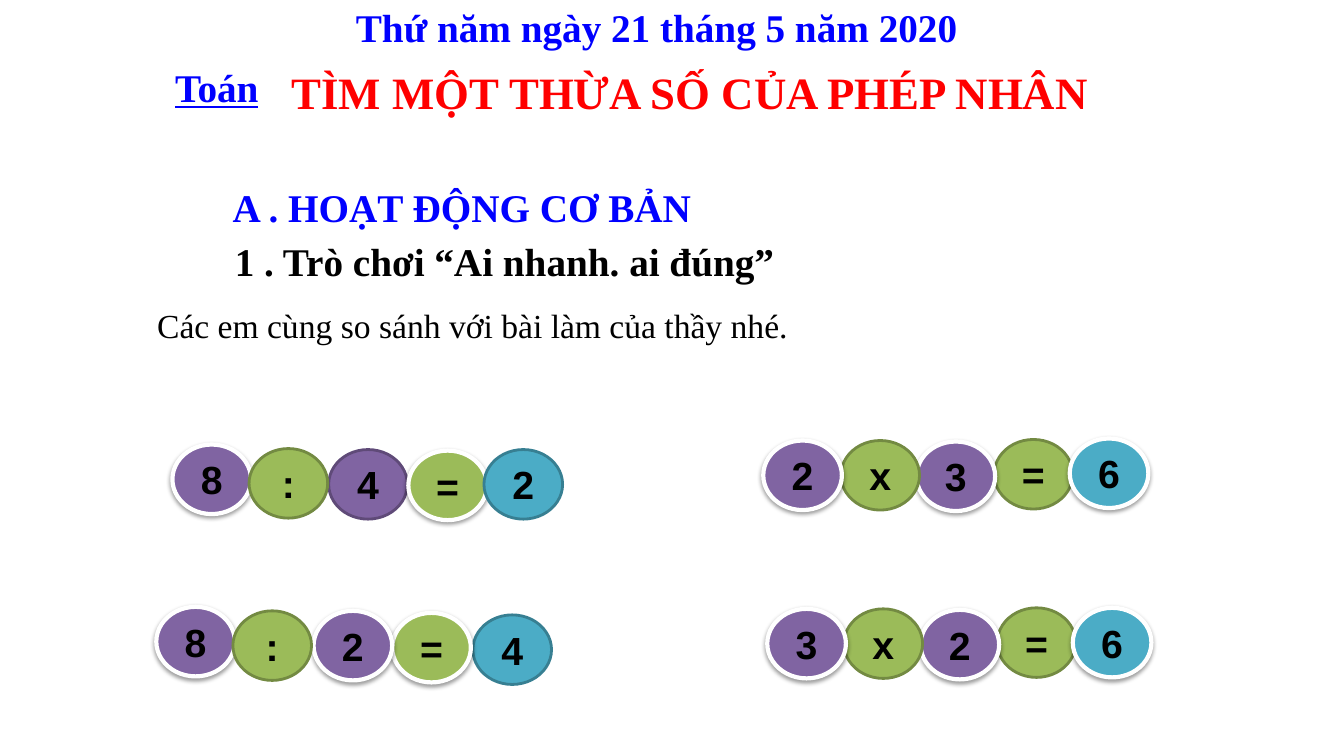
from lxml.etree import SubElement
from pptx import Presentation
from pptx.dml.color import RGBColor
from pptx.enum.shapes import MSO_SHAPE
from pptx.enum.text import MSO_ANCHOR, MSO_AUTO_SIZE, PP_ALIGN
from pptx.oxml.ns import qn
from pptx.util import Inches, Pt

COLORS = {
    "blue": "0000FF", "red": "FF0000", "black": "000000", "white": "FFFFFF",
    "purple": "8064A2", "purple_edge": "5F4A78",
    "green": "9BBB59", "green_edge": "738A42",
    "teal": "4BACC6", "teal_edge": "377F92",
}
SERIF, SANS = "Times New Roman", "Arial"
BALL_COLORS = ["purple", "green", "purple", "green", "teal"]
BALL_SIZE = (0.78, 0.69)

# Each ball: position in the equation, x and y offset, raised or flat; back to front.
EQUATIONS = [
    ((1.71, 4.41), "8:4=2", [
        (2, 1.55, 0.05, False), (3, 2.34, 0.06, True), (0, 0, 0, True),
        (4, 3.09, 0.05, False), (1, 0.76, 0.04, False)]),
    ((7.57, 4.37), "2x3=6", [
        (3, 2.29, -0.01, False), (2, 1.52, 0.01, True), (1, 0.77, 0, False),
        (0, 0, 0, True), (4, 3.04, -0.02, True)]),
    ((1.55, 6.02), "8:2=4", [
        (4, 3.14, 0.08, False), (3, 2.34, 0.06, True), (0, 0, 0, True),
        (2, 1.56, 0.04, True), (1, 0.76, 0.04, False)]),
    ((7.61, 6.04), "3x2=6", [
        (3, 2.28, -0.01, False), (2, 1.52, 0.01, True), (1, 0.76, 0, False),
        (0, 0, 0, True), (4, 3.03, -0.01, True)]),
]


def rgb(name):
    return RGBColor.from_string(COLORS[name])


def write(frame, text, color, align=PP_ALIGN.LEFT, **font_format):
    """Fill a text frame with one paragraph; bold 28 pt serif unless told otherwise."""
    paragraph = frame.paragraphs[0]
    paragraph.alignment = align
    run = paragraph.add_run()
    run.text = text
    run.font.color.rgb = rgb(color)
    defaults = {"name": SERIF, "size": Pt(28), "bold": True}
    for attribute, value in {**defaults, **font_format}.items():
        setattr(run.font, attribute, value)


def add_line_of_text(slide, box, text, color, wrap=True, **text_format):
    frame = slide.shapes.add_textbox(*map(Inches, box)).text_frame
    frame.word_wrap = wrap
    frame.auto_size = MSO_AUTO_SIZE.SHAPE_TO_FIT_TEXT
    write(frame, text, color, **text_format)


def add_header(slide, left, top):
    """Place the date, the subject and the lesson title."""
    lesson = slide.shapes.title
    place = {"left": left + 1.81, "top": top + 0.61, "width": 8.35, "height": 0.64}
    for attribute, value in place.items():
        setattr(lesson, attribute, Inches(value))
    lesson.text_frame.vertical_anchor = MSO_ANCHOR.TOP
    write(lesson.text_frame, "TÌM MỘT THỪA SỐ CỦA PHÉP NHÂN", "red",
          PP_ALIGN.CENTER, size=Pt(32))
    add_line_of_text(slide, (left + 2.45, top, 6.5, 0.57),
                     "Thứ năm ngày 21 tháng 5 năm 2020 ", "blue",
                     align=PP_ALIGN.CENTER)
    add_line_of_text(slide, (left, top + 0.6, 2.58, 0.57), "Toán", "blue",
                     align=PP_ALIGN.CENTER, underline=True)


def add_activity(slide, left, top):
    add_line_of_text(slide, (left + 0.75, top, 8.67, 0.57),
                     "A . HOẠT ĐỘNG CƠ BẢN", "blue")
    add_line_of_text(slide, (left + 0.77, top + 0.54, 6.11, 0.57),
                     "1 . Trò chơi “Ai nhanh. ai đúng”", "black", wrap=False)
    add_line_of_text(slide, (left, top + 1.21, 7.31, 0.5),
                     "Các em cùng so sánh với bài làm của thầy nhé.", "black",
                     wrap=False, size=Pt(24), bold=False)


def add_drop_shadow(shape):
    effects = shape._element.spPr.find(qn("a:effectLst"))
    shadow = SubElement(effects, qn("a:outerShdw"), blurRad="40000", dist="20000",
                        dir="5400000", rotWithShape="0")
    color = SubElement(shadow, qn("a:srgbClr"), val=COLORS["black"])
    SubElement(color, qn("a:alpha"), val="38000")


def add_ball(slide, left, top, symbol, color, raised):
    """Draw one symbol; a raised ball has a white rim and a shadow."""
    ball = slide.shapes.add_shape(MSO_SHAPE.OVAL,
                                  *map(Inches, (left, top, *BALL_SIZE)))
    ball.fill.solid()
    ball.fill.fore_color.rgb = rgb(color)
    ball.line.color.rgb = rgb("white" if raised else f"{color}_edge")
    ball.line.width = Pt(3 if raised else 2)
    ball.shadow.inherit = False
    if raised:
        add_drop_shadow(ball)
    ball.text_frame.word_wrap = False
    ball.text_frame.vertical_anchor = MSO_ANCHOR.MIDDLE
    write(ball.text_frame, symbol, "black", PP_ALIGN.CENTER, name=SANS)


def add_equation(slide, left, top, symbols, balls):
    for position, dx, dy, raised in balls:
        add_ball(slide, left + dx, top + dy, symbols[position],
                 BALL_COLORS[position], raised)


def main():
    deck = Presentation()
    deck.slide_width, deck.slide_height = Inches(13.33), Inches(7.5)
    slide = deck.slides.add_slide(deck.slide_layouts.get_by_name("Title Only"))
    add_header(slide, 0.86, -0.02)
    add_activity(slide, 1.46, 1.77)
    for (left, top), symbols, balls in EQUATIONS:
        add_equation(slide, left, top, symbols, balls)
    deck.save("out.pptx")


if __name__ == "__main__":
    main()
